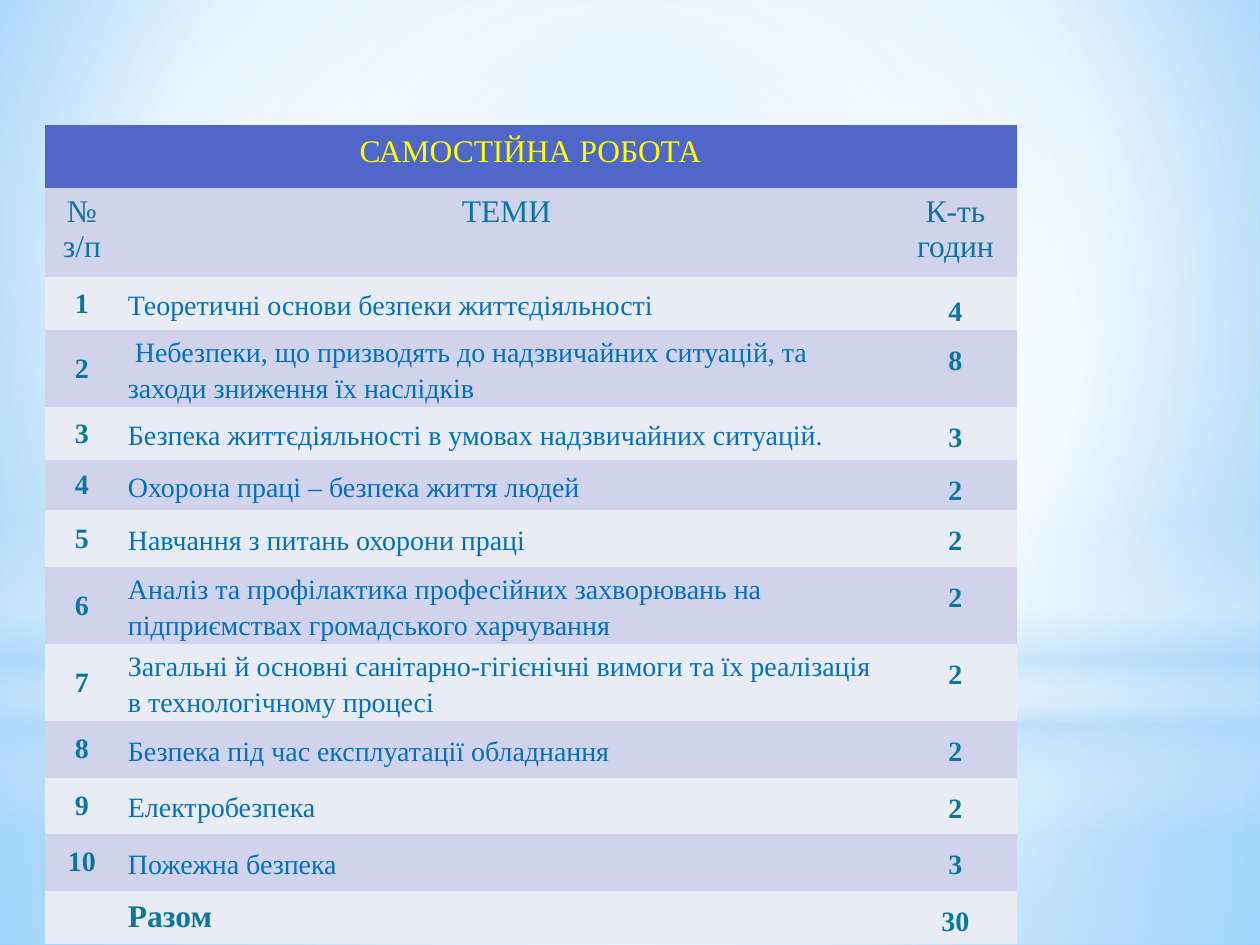
import pptx
import pptx.dml.color
import pptx.enum.shapes
import pptx.enum.text
import pptx.oxml
import pptx.util

Cm, Pt = pptx.util.Cm, pptx.util.Pt
ALIGN = pptx.enum.text.PP_ALIGN
ANCHOR = pptx.enum.text.MSO_ANCHOR
SHAPE = pptx.enum.shapes.MSO_SHAPE

# Content
TITLE = "САМОСТІЙНА РОБОТА"
HEADS = ["№ з/п", "ТЕМИ", "К-ть годин"]
TOPICS = [
    ("Теоретичні основи безпеки життєдіяльності", 4),
    (" Небезпеки, що призводять до надзвичайних ситуацій, та заходи зниження їх наслідків", 8),
    ("Безпека життєдіяльності в умовах надзвичайних ситуацій.", 3),
    ("Охорона праці – безпека життя людей", 2),
    ("Навчання з питань охорони праці", 2),
    ("Аналіз та профілактика професійних захворювань на підприємствах громадського харчування", 2),
    ("Загальні й основні санітарно-гігієнічні вимоги та їх реалізація в технологічному процесі", 2),
    ("Безпека під час експлуатації обладнання", 2),
    ("Електробезпека", 2),
    ("Пожежна безпека", 3),
]
TOTAL = ("Разом", sum(hours for _, hours in TOPICS))

# Sizes in cm
WIDTH, HEIGHT = 25.4, 19.05
LEFT, TOP = 0.9, 2.52
COLS = [1.5, 15.62, 2.48]
ROWS = [1.27, 1.8, 1.07, 1.55, 1.07, 1.01, 1.15, 1.55, 1.55, 1.14, 1.14, 1.14, 1.07]

# Colours
FONT = "Times New Roman"
TEAL, BLUE, YELLOW = "0C779D", "0070C0", "FFFF00"
BAR, BANDS = "4E67C8", ["E9EBF5", "D0D3EB"]
WHITE, SKY = "FFFFFF", "B4DCFA"

# Backdrop: stops are (place, colour, opacity) in percent
MIDDLE = (50, 50, 50, 50)
BASE = [(0, "9ED5FF", 100), (60, WHITE, 100), (100, "5BB9FF", 100)]
LAYERS = [
    (SHAPE.RECTANGLE, 14.17, 4.88, MIDDLE,
     [(0, WHITE, 91), (37, WHITE, 76), (100, SKY, 79)]),
    (SHAPE.RECTANGLE, 0, 14.17, MIDDLE,
     [(0, WHITE, 89), (48, WHITE, 62), (100, SKY, 79)]),
    (SHAPE.RECTANGLE, 10.46, 6.35, None,
     [(0, WHITE, 0), (29, WHITE, 30), (45, SKY, 40),
      (55, WHITE, 26), (65, SKY, 60), (100, WHITE, 0)]),
    (SHAPE.OVAL, 4.45, 14.17, MIDDLE, [(0, WHITE, 100), (56, WHITE, 0)]),
]


def tint(code):
    return pptx.dml.color.RGBColor.from_string(code)


def blend(fill, holder, stops, focus):
    """Fill with a round gradient, or a downward one without a focus."""
    fill.solid()
    marks = "".join(
        f'<a:gs pos="{place * 1000}"><a:srgbClr val="{code}">'
        f'<a:alpha val="{alpha * 1000}"/></a:srgbClr></a:gs>'
        for place, code, alpha in stops)
    if focus:
        sides = " ".join(f'{side}="{part * 1000}"' for side, part in zip("ltrb", focus))
        course = f'<a:path path="circle"><a:fillToRect {sides}/></a:path>'
    else:
        course = '<a:lin ang="5400000" scaled="0"/>'
    grad = pptx.oxml.parse_xml(
        '<a:gradFill xmlns:a="http://schemas.openxmlformats.org/drawingml/2006/main" '
        f'rotWithShape="1"><a:gsLst>{marks}</a:gsLst>{course}</a:gradFill>')
    holder.replace(holder.xpath("./a:solidFill")[0], grad)


def write(frame, text, color, size=18, bold=False, align=ALIGN.CENTER, line=None, after=None):
    para = frame.paragraphs[0]
    para.alignment, para.line_spacing = align, line
    if after:
        para.space_after = Pt(after)
    run = para.add_run()
    run.text = str(text)
    font = run.font
    font.name, font.size, font.bold = FONT, Pt(size), bold
    font.color.rgb = tint(color)


def trim(cell, anchor):
    cell.margin_left = cell.margin_right = Cm(0.18)
    cell.margin_top = cell.margin_bottom = 0
    cell.vertical_anchor = anchor


deck = pptx.Presentation()
deck.slide_width, deck.slide_height = Cm(WIDTH), Cm(HEIGHT)
slide = deck.slides.add_slide(deck.slide_layouts[6])

# Backdrop
back = slide.background.fill
back.solid()
blend(back, slide.element.xpath(".//p:bgPr")[0], BASE, (20, 10, 20, 60))
for kind, top, high, focus, stops in LAYERS:
    layer = slide.shapes.add_shape(kind, 0, Cm(top), Cm(WIDTH), Cm(high))
    layer.shadow.inherit = False
    layer.line.fill.background()
    blend(layer.fill, layer.element.spPr, stops, focus)

# Table grid
frame = slide.shapes.add_table(len(ROWS), len(COLS), Cm(LEFT), Cm(TOP),
                               Cm(sum(COLS)), Cm(sum(ROWS)))
table = frame.table
table.first_row = table.horz_banding = False
# The plain style has no grid lines
frame.element.xpath(".//a:tableStyleId")[0].text = "{2D5ABB26-0587-4C30-8999-92F81FD0307C}"
for col, wide in zip(table.columns, COLS):
    col.width = Cm(wide)
for num, (row, high) in enumerate(zip(table.rows, ROWS)):
    row.height = Cm(high)
    for cell in row.cells:
        cell.fill.solid()
        cell.fill.fore_color.rgb = tint(BANDS[num % 2] if num else BAR)
table.cell(0, 0).merge(table.cell(0, len(COLS) - 1))

# Table text
for col, head in enumerate(HEADS):
    write(table.cell(1, col).text_frame, head, TEAL)
for num, (topic, hours) in enumerate(TOPICS + [TOTAL], 1):
    index, name, count = table.rows[num + 1].cells
    trim(name, ANCHOR.MIDDLE)
    trim(count, ANCHOR.MIDDLE if num == 1 else ANCHOR.TOP)
    if num <= len(TOPICS):
        index.vertical_anchor = ANCHOR.MIDDLE
        write(index.text_frame, num, TEAL, 16, True)
        write(name.text_frame, topic, BLUE, 16, False, ALIGN.LEFT, 1.15, 10)
    else:
        write(name.text_frame, topic, TEAL, 18, True, ALIGN.LEFT)
    write(count.text_frame, hours, TEAL, 16, True, line=1.5, after=10 if num == 1 else None)

# Title over the top bar
box = slide.shapes.add_textbox(Cm(4.32), Cm(TOP), Cm(12.75), Cm(1.02))
box.text_frame.word_wrap = True
write(box.text_frame, TITLE, YELLOW)

deck.save("out.pptx")
